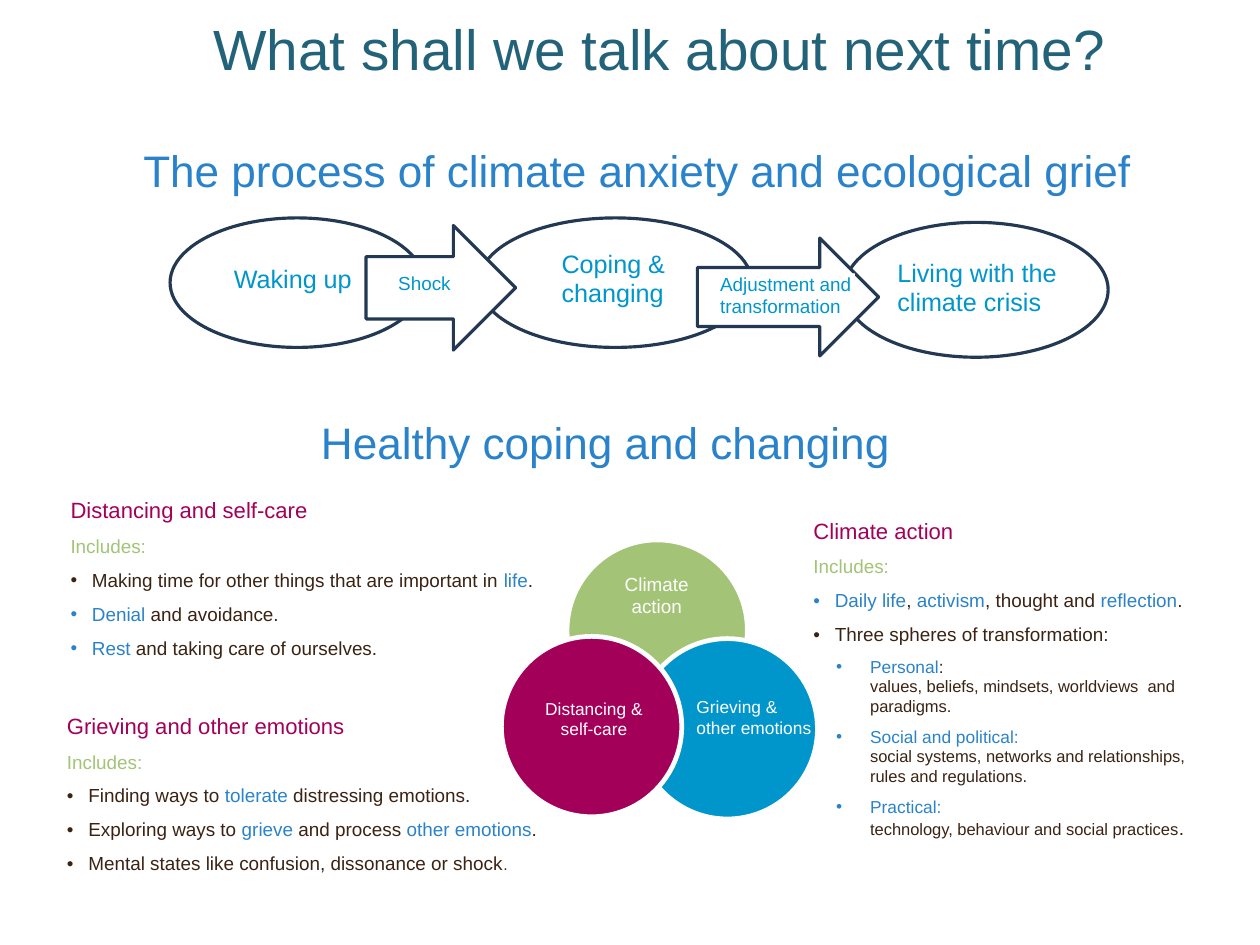
from lxml import etree
from pptx import Presentation
from pptx.dml.color import RGBColor
from pptx.enum.shapes import MSO_SHAPE
from pptx.enum.text import PP_ALIGN
from pptx.oxml.ns import qn
from pptx.util import Cm, Pt

ELLIPSE = MSO_SHAPE.OVAL
ARROW = MSO_SHAPE.RIGHT_ARROW
LEFT, CENTER = PP_ALIGN.LEFT, PP_ALIGN.CENTER

COLOURS = {
    "white": "FFFFFF",
    "outline": "233953",
    "title": "23637A",
    "blue": "2A83CA",
    "cyan": "0096CC",
    "plum": "A3005A",
    "green": "A3C476",
    "ink": "3B2313",
}
POINT = (0.48, -0.48)
SPHERE = (1.27, -0.76)


def marked(text, size=12):
    pieces = enumerate(text.split("*"))
    return [(piece, "blue" if i % 2 else "ink", size) for i, piece in pieces if piece]


def section(heading, points):
    intro = [([(heading, "plum", 14)], None), ([("Includes:", "green", 12)], None)]
    return intro + [(point, POINT) for point in points]


class SlideBuilder:
    font = "Arial"
    line_spacing = 0.98
    space_ratio = 0.62

    def __init__(self, slide):
        self.slide = slide

    def colour(self, name):
        return RGBColor.from_string(COLOURS[name])

    def paint(self, shape, fill):
        if fill:
            shape.fill.solid()
            shape.fill.fore_color.rgb = self.colour(fill)
        else:
            shape.fill.background()

    def outline(self, kind, box, fill=None, line="outline", width=2):
        shape = self.slide.shapes.add_shape(kind, *map(Cm, box))
        shape.shadow.inherit = False
        self.paint(shape, fill)
        shape.line.color.rgb = self.colour(line)
        shape.line.width = Pt(width)

    def label(self, text, box, size, colour, align=LEFT, fill=None):
        self.paragraphs([([(text, colour, size)], None)], box, align, fill)

    def paragraphs(self, content, box, align=LEFT, fill=None):
        holder = self.slide.shapes.add_textbox(*map(Cm, box))
        self.paint(holder, fill)
        frame = holder.text_frame
        frame.word_wrap = True
        frame.margin_left = Cm(0.03)
        frame.margin_right = frame.margin_top = frame.margin_bottom = 0
        for index, (runs, indent) in enumerate(content):
            paragraph = frame.add_paragraph() if index else frame.paragraphs[0]
            paragraph.alignment = align
            paragraph.line_spacing = self.line_spacing
            if index:
                paragraph.space_before = Pt(runs[0][2] * self.space_ratio)
            if indent:
                self.bullet(paragraph, *indent)
            for run in runs:
                self.run(paragraph, *run)

    def run(self, paragraph, text, colour, size):
        for index, piece in enumerate(text.split("\n")):
            if index:
                paragraph.add_line_break()
                line_break = paragraph._p.findall(qn("a:br"))[-1]
                etree.SubElement(line_break, qn("a:rPr"), sz=str(int(size * 100)))
            if piece:
                run = paragraph.add_run()
                run.text = piece
                run.font.name = self.font
                run.font.size = Pt(size)
                run.font.color.rgb = self.colour(colour)

    def bullet(self, paragraph, margin, hanging):
        properties = paragraph._p.get_or_add_pPr()
        properties.set("marL", str(Cm(margin)))
        properties.set("indent", str(Cm(hanging)))
        etree.SubElement(properties, qn("a:buFont"), typeface=self.font)
        etree.SubElement(properties, qn("a:buChar"), char="•")


def draw_process(builder):
    builder.label("What shall we talk about next time?", (4.75, 0.38, 20.5, 1.5), 36, "title")
    builder.label("The process of climate anxiety and ecological grief",
                  (3.18, 3.28, 22.6, 0.86), 28, "blue")
    stages = [(3.81, 4.88, 5.69, 2.9), (10.72, 4.88, 6.12, 2.9), (18.9, 4.98, 5.92, 3.02)]
    for stage in stages:
        builder.outline(ELLIPSE, stage)
    for transition in [(8.2, 5.05, 3.35, 2.79), (15.62, 5.33, 4.06, 2.64)]:
        builder.outline(ARROW, transition, "white")
    builder.label("Waking up", (5.21, 5.92, 2.8, 0.53), 16, "cyan")
    builder.label("Coping &\nchanging", (12.55, 5.59, 4.06, 0.53), 16, "cyan")
    builder.label("Living with the\nclimate crisis", (20.07, 5.79, 5.28, 0.53), 16, "cyan")
    builder.label("Shock", (8.89, 6.1, 1.4, 0.53), 12, "cyan")
    builder.label("Adjustment and\ntransformation", (16.1, 6.12, 3.05, 0.53), 12, "cyan",
                  fill="white")


def draw_coping_circles(builder):
    builder.label("Healthy coping and changing", (7.16, 9.37, 17.86, 1.75), 28, "blue")
    diameter = 4.04
    for left, top, fill in [(12.7, 12.09, "green"), (14.27, 14.3, "cyan"), (11.23, 14.25, "plum")]:
        builder.outline(ELLIPSE, (left, top, diameter, diameter), fill, "white", 3)
    builder.label("Climate action", (13.59, 12.85, 2.21, 1.09), 12, "white", CENTER)
    builder.label("Grieving &\nother emotions", (15.57, 15.62, 2.72, 1.04), 11, "white")
    builder.label("Distancing & self-care", (11.84, 15.65, 2.9, 1.04), 11, "white", CENTER)


def draw_explanations(builder):
    distancing = [
        marked("Making time for other things that are important in *life*."),
        marked("*Denial* and avoidance."),
        marked("*Rest* and taking care of ourselves."),
    ]
    grieving = [
        marked("Finding ways to *tolerate* distressing emotions."),
        marked("Exploring ways to *grieve* and process *other emotions*."),
        marked("Mental states like confusion, dissonance or shock") + marked(".", 10),
    ]
    action = [
        marked("*Daily life*, *activism*, thought and *reflection*."),
        marked("Three spheres of transformation:"),
    ]
    spheres = [
        marked("*Personal*:\n", 11)
        + marked("values, beliefs, mindsets, worldviews  and\nparadigms.", 10.5),
        marked("*Social and political:\n*", 11)
        + marked("social systems, networks and relationships,\nrules and regulations.", 10.5),
        marked("*Practical:\n*", 11)
        + marked("technology, behaviour and social practices", 10.5) + marked("."),
    ]
    builder.paragraphs(section("Distancing and self-care", distancing), (1.55, 11.15, 10.9, 3.9))
    builder.paragraphs(section("Grieving and other emotions", grieving), (1.47, 15.98, 10.9, 3.9))
    builder.paragraphs(section("Climate action", action) + [(sphere, SPHERE) for sphere in spheres],
                       (18.19, 11.61, 8.7, 8.33))


def main():
    presentation = Presentation()
    presentation.slide_width = Cm(28.22)
    presentation.slide_height = Cm(21.16)
    builder = SlideBuilder(presentation.slides.add_slide(presentation.slide_layouts[6]))
    draw_process(builder)
    draw_coping_circles(builder)
    draw_explanations(builder)
    presentation.save("out.pptx")


if __name__ == "__main__":
    main()
